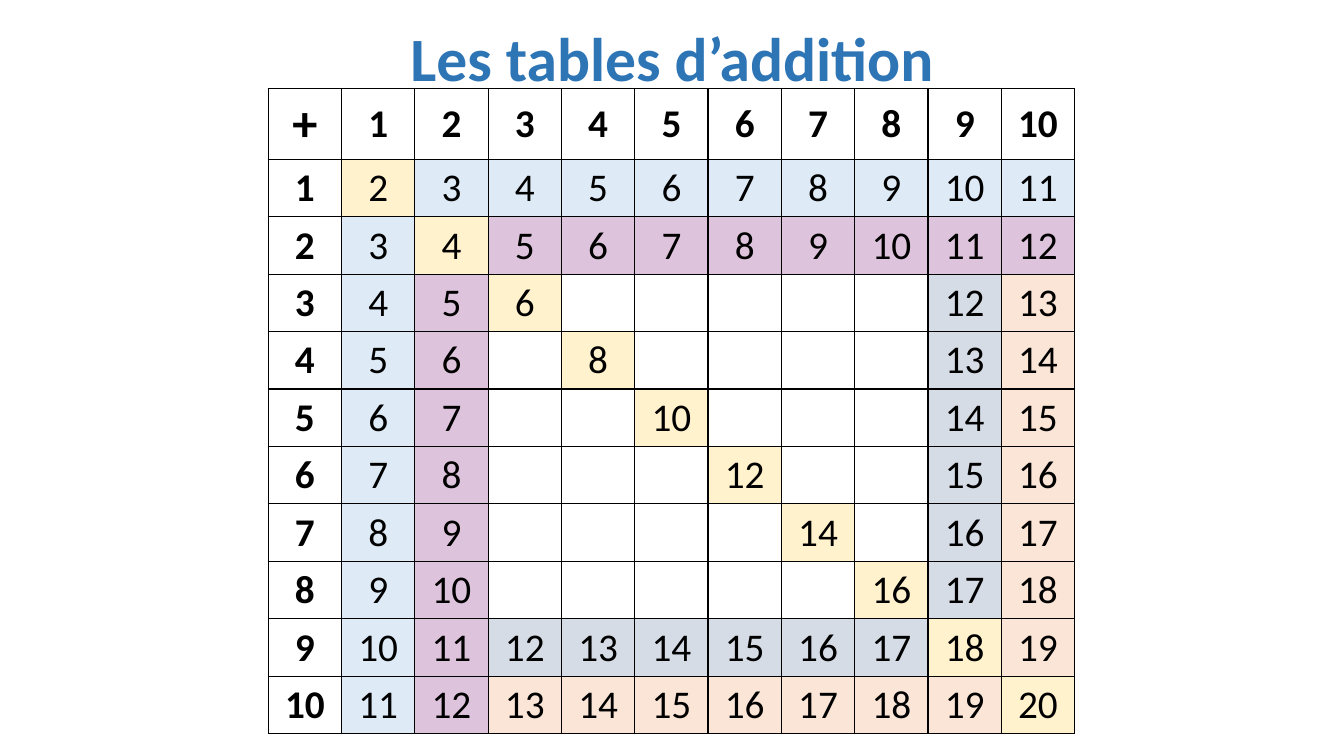
from dataclasses import dataclass

from lxml.etree import SubElement
from pptx import Presentation
from pptx.dml.color import RGBColor
from pptx.enum.text import MSO_ANCHOR, PP_ALIGN
from pptx.oxml.ns import qn
from pptx.util import Inches, Pt


@dataclass(frozen=True)
class Theme:
    font: str = "Calibri"
    title: str = "2E75B6"
    ink: str = "000000"
    header: str = "FFFFFF"
    double: str = "FFF2CC"
    plus_one: str = "DEEBF7"
    plus_two: str = "DEC3DC"
    plus_nine: str = "D6DCE5"
    plus_ten: str = "FBE5D6"
    title_size: int = 44
    sign_size: int = 36
    number_size: int = 28


theme = Theme()
LAST = 10


def write(frame, text, size, color, bold):
    frame.text = text
    paragraph = frame.paragraphs[0]
    paragraph.alignment = PP_ALIGN.CENTER
    font = paragraph.runs[0].font
    font.name = theme.font
    font.size = Pt(size)
    font.bold = bold
    font.color.rgb = RGBColor.from_string(color)


def sum_color(row, column):
    low, high = sorted((row, column))
    if low == 0:
        return theme.header
    if low == high:
        return theme.double
    if low <= 2:
        return {1: theme.plus_one, 2: theme.plus_two}[low]
    return {9: theme.plus_nine, 10: theme.plus_ten}.get(high)


presentation = Presentation()
presentation.slide_width = Inches(13.33)
presentation.slide_height = Inches(7.5)
slide = presentation.slides.add_slide(presentation.slide_layouts[6])

title = slide.shapes.add_textbox(
    Inches(0.92), Inches(-0.11), Inches(11.5), Inches(1.45)
).text_frame
title.word_wrap = True
title.vertical_anchor = MSO_ANCHOR.MIDDLE
write(title, "Les tables d’addition", theme.title_size, theme.title, True)
title.paragraphs[0].line_spacing = 0.9

additions = slide.shapes.add_table(
    LAST + 1, LAST + 1, Inches(2.66), Inches(0.88), Inches(8), Inches(6.4)
).table
additions.first_row = False
additions.horz_banding = False
for column in additions.columns:
    column.width = Inches(8 / (LAST + 1))
for row in additions.rows:
    row.height = Inches(0.57)
additions.rows[0].height = Inches(0.7)

for row in range(LAST + 1):
    for column in range(LAST + 1):
        cell = additions.cell(row, column)
        cell.vertical_anchor = MSO_ANCHOR.MIDDLE

        properties = cell._tc.get_or_add_tcPr()
        for side in ("a:lnL", "a:lnR", "a:lnT", "a:lnB"):
            border = SubElement(properties, qn(side), w=str(Pt(1)))
            border_fill = SubElement(border, qn("a:solidFill"))
            SubElement(border_fill, qn("a:srgbClr"), val=theme.ink)

        color = sum_color(row, column)
        if color is None:
            cell.fill.background()
            continue
        cell.fill.solid()
        cell.fill.fore_color.rgb = RGBColor.from_string(color)
        is_corner = row + column == 0
        text = "+" if is_corner else str(row + column)
        size = theme.sign_size if is_corner else theme.number_size
        write(cell.text_frame, text, size, theme.ink, row * column == 0)

presentation.save("out.pptx")
